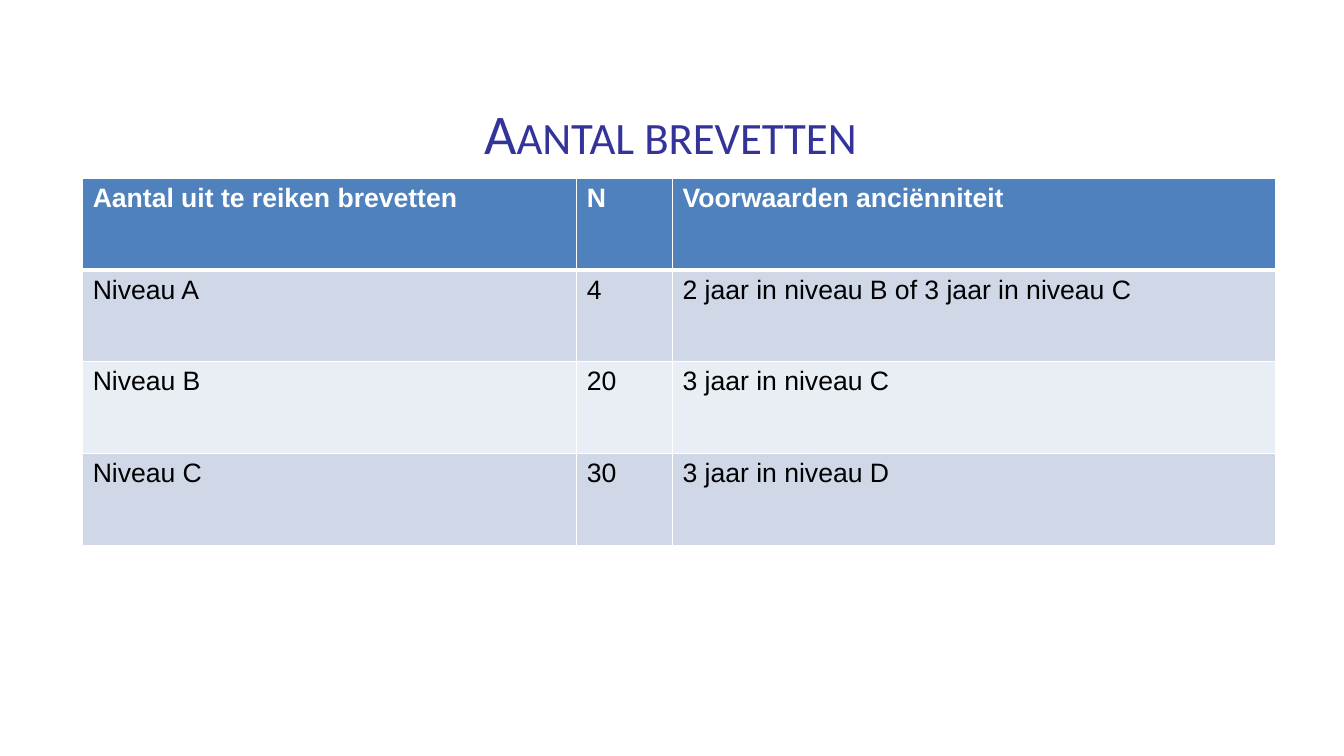
from dataclasses import dataclass

from lxml.etree import SubElement
from pptx import Presentation
from pptx.dml.color import RGBColor
from pptx.enum.text import MSO_ANCHOR, PP_ALIGN
from pptx.oxml.ns import qn
from pptx.util import Inches, Pt

TITLE = "Aantal brevetten"
ROWS = [
    ("Aantal uit te reiken brevetten", "N", "Voorwaarden anciënniteit"),
    ("Niveau A", "4", "2 jaar in niveau B of 3 jaar in niveau C"),
    ("Niveau B", "20", "3 jaar in niveau C"),
    ("Niveau C", "30", "3 jaar in niveau D"),
]
COLUMN_WIDTHS = (4.9, 0.95, 5.98)
ROW_HEIGHT = 0.91
TITLE_BOX = (0.65, 0.52, 12, 1.25)
TABLE_LEFT, TABLE_TOP = 0.82, 1.77


@dataclass(frozen=True)
class Theme:
    title_font: str = "Calibri"
    body_font: str = "Arial"
    title_size: int = 40
    body_size: int = 19
    title: str = "333399"
    header: str = "4F81BD"
    header_text: str = "FFFFFF"
    body_text: str = "000000"
    bands: tuple = ("D0D8E8", "E9EDF4")
    border: str = "FFFFFF"
    thin: int = 1
    thick: int = 3


THEME = Theme()


def add_run(paragraph, text, font_name, size, color, bold=False):
    run = paragraph.add_run()
    run.text = text
    run.font.name = font_name
    run.font.size = Pt(size)
    run.font.bold = bold
    run.font.color.rgb = RGBColor.from_string(color)
    return run


def set_border(cell, side, width):
    properties = cell._tc.get_or_add_tcPr()
    line = SubElement(properties, qn(f"a:ln{side}"), w=str(Pt(width)))
    fill = SubElement(line, qn("a:solidFill"))
    SubElement(fill, qn("a:srgbClr"), val=THEME.border)


def add_title(slide):
    title = slide.shapes.title
    title.left, title.top, title.width, title.height = map(Inches, TITLE_BOX)
    title.text_frame.vertical_anchor = MSO_ANCHOR.MIDDLE
    paragraph = title.text_frame.paragraphs[0]
    paragraph.alignment = PP_ALIGN.CENTER
    paragraph.line_spacing = 1.5
    run = add_run(paragraph, TITLE, THEME.title_font, THEME.title_size, THEME.title)
    run.font._element.set("cap", "small")


def format_cell(cell, text, row_index):
    is_header = row_index == 0
    for side in "LRTB":
        near_header = (side == "B" and is_header) or (side == "T" and row_index == 1)
        set_border(cell, side, THEME.thick if near_header else THEME.thin)
    fill = THEME.header if is_header else THEME.bands[(row_index - 1) % 2]
    cell.fill.solid()
    cell.fill.fore_color.rgb = RGBColor.from_string(fill)
    color = THEME.header_text if is_header else THEME.body_text
    paragraph = cell.text_frame.paragraphs[0]
    add_run(paragraph, text, THEME.body_font, THEME.body_size, color, is_header)


def add_certificate_table(slide):
    table = slide.shapes.add_table(
        len(ROWS), len(COLUMN_WIDTHS), Inches(TABLE_LEFT), Inches(TABLE_TOP),
        Inches(sum(COLUMN_WIDTHS)), Inches(ROW_HEIGHT * len(ROWS)),
    ).table
    for column, width in zip(table.columns, COLUMN_WIDTHS):
        column.width = Inches(width)
    for row_index, (row, texts) in enumerate(zip(table.rows, ROWS)):
        row.height = Inches(ROW_HEIGHT)
        for cell, text in zip(row.cells, texts):
            format_cell(cell, text, row_index)


def main():
    presentation = Presentation()
    presentation.slide_width = Inches(13.33)
    presentation.slide_height = Inches(7.5)
    slide = presentation.slides.add_slide(presentation.slide_layouts[5])
    add_title(slide)
    add_certificate_table(slide)
    presentation.save("out.pptx")


if __name__ == "__main__":
    main()
